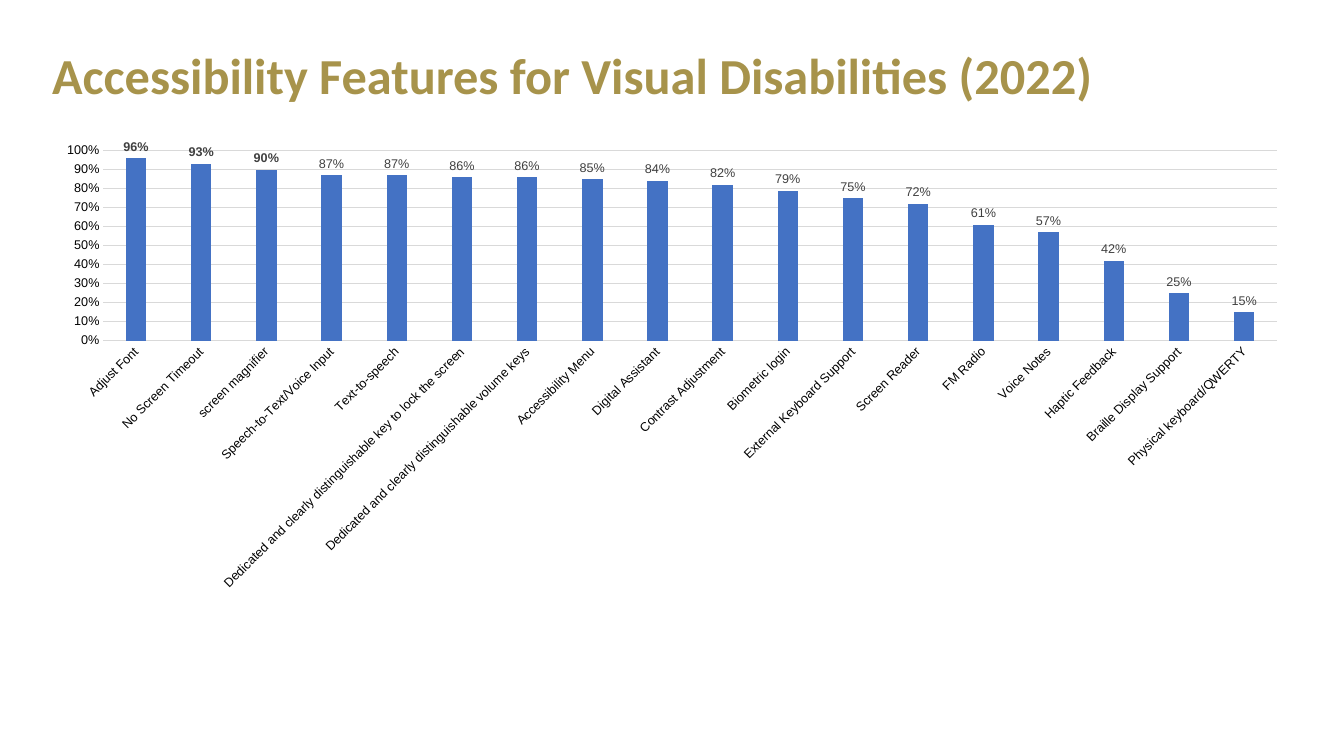
"""Build a slide with a column chart of accessibility features for visual disabilities."""
from pptx import Presentation
from pptx.chart.data import CategoryChartData
from pptx.dml.color import RGBColor
from pptx.enum.chart import XL_CHART_TYPE, XL_LABEL_POSITION, XL_TICK_MARK
from pptx.enum.text import MSO_ANCHOR, MSO_AUTO_SIZE, PP_ALIGN
from pptx.util import Emu, Pt

COLUMNS = XL_CHART_TYPE.COLUMN_CLUSTERED
OUTSIDE_END = XL_LABEL_POSITION.OUTSIDE_END
NO_TICK = XL_TICK_MARK.NONE
MIDDLE = MSO_ANCHOR.MIDDLE
NO_AUTOFIT = MSO_AUTO_SIZE.NONE
LEFT = PP_ALIGN.LEFT

EMU_PER_INCH = 914400
PX_PER_INCH = 100.8
BOLD_LABELS = 3
FEATURES = {
    "Adjust Font": 0.96,
    "No Screen Timeout": 0.93,
    "screen magnifier": 0.90,
    "Speech-to-Text/Voice Input": 0.87,
    "Text-to-speech": 0.87,
    "Dedicated and clearly distinguishable key to lock the screen": 0.86,
    "Dedicated and clearly distinguishable volume keys": 0.86,
    "Accessibility Menu": 0.85,
    "Digital Assistant": 0.84,
    "Contrast Adjustment": 0.82,
    "Biometric login": 0.79,
    "External Keyboard Support": 0.75,
    "Screen Reader": 0.72,
    "FM Radio": 0.61,
    "Voice Notes": 0.57,
    "Haptic Feedback": 0.42,
    "Braille Display Support": 0.25,
    "Physical keyboard/QWERTY": 0.15,
}


def px(length):
    return Emu(round(length * EMU_PER_INCH / PX_PER_INCH))


def style_font(font, name, size, color, bold=False):
    font.name = name
    font.size = Pt(size)
    font.bold = bold
    font.color.rgb = RGBColor.from_string(color)


presentation = Presentation()
presentation.slide_width = px(1344)
presentation.slide_height = px(756)
slide = presentation.slides.add_slide(presentation.slide_layouts[5])

title = slide.shapes.title
title.left, title.top, title.width, title.height = px(42), px(22), px(1260), px(112)
title_frame = title.text_frame
title_frame.text = "Accessibility Features for Visual Disabilities (2022)"
title_frame.word_wrap = True
title_frame.auto_size = NO_AUTOFIT
title_frame.vertical_anchor = MIDDLE
paragraph = title_frame.paragraphs[0]
paragraph.alignment = LEFT
paragraph.line_spacing = 0.9
style_font(paragraph.font, "Calibri", 36, "A7934B", bold=True)

chart_data = CategoryChartData(number_format="0%")
chart_data.categories = FEATURES.keys()
chart_data.add_series("Series 1", FEATURES.values())
chart = slide.shapes.add_chart(COLUMNS, px(42), px(134), px(1260), px(466), chart_data).chart
chart.has_title = False
chart.has_legend = False
style_font(chart.font, "Arial", 10, "000000")

category_axis, value_axis = chart.category_axis, chart.value_axis
for axis in (category_axis, value_axis):
    axis.major_tick_mark = NO_TICK
    axis.minor_tick_mark = NO_TICK
    style_font(axis.tick_labels.font, "Arial", 9, "000000")
category_axis._element.xpath("c:txPr/a:bodyPr")[0].set("rot", "-2700000")

value_axis.minimum_scale = 0
value_axis.maximum_scale = 1
value_axis.major_unit = 0.1
value_axis.tick_labels.number_format = "0%"
value_axis.tick_labels.number_format_is_linked = False
value_axis.format.line.fill.background()
for line in (category_axis.format.line, value_axis.major_gridlines.format.line):
    line.width = Pt(0.75)
    line.color.rgb = RGBColor.from_string("D9D9D9")

plot = chart.plots[0]
plot.gap_width = 219
plot.overlap = -27
plot.vary_by_categories = False
series = plot.series[0]
series.format.fill.solid()
series.format.fill.fore_color.rgb = RGBColor.from_string("4472C4")

labels = series.data_labels
labels.show_value = True
labels.position = OUTSIDE_END
labels.number_format = "0%"
labels.number_format_is_linked = False
style_font(labels.font, "Arial", 9, "404040")
for index in range(BOLD_LABELS):
    label = series.points[index].data_label
    style_font(label.font, "Arial", 9, "404040", bold=True)
    label.position = OUTSIDE_END

presentation.save("out.pptx")
